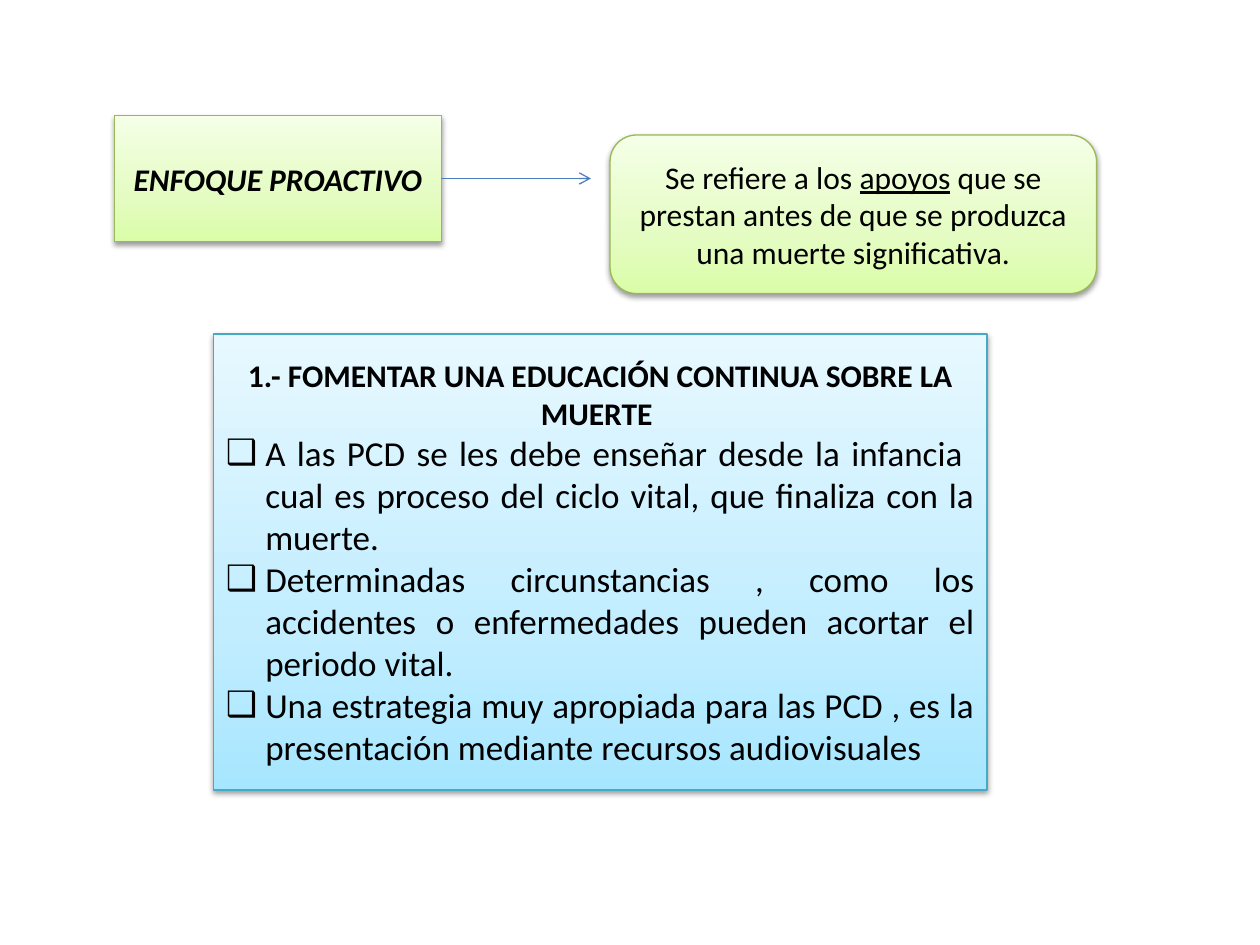
from lxml import etree
from pptx import Presentation
from pptx import util as u
from pptx.dml.color import RGBColor
from pptx.enum import shapes, text
from pptx.oxml import ns

COLORS = {
    "text": "000000",
    "arrow": "4B7EBC",
    "shadow": "000000",
    "green_line": "98B955",
    "blue_line": "46AAC5",
}
GRADIENTS = {
    "green": ((0, "DAFDA7"), (35, "E4FCC2"), (100, "F5FFE7")),
    "blue": ((0, "A7E6FF"), (35, "C1EDFF"), (100, "E7F8FF")),
}
FONT = "Calibri"
HEADING = "1.- FOMENTAR UNA EDUCACIÓN CONTINUA SOBRE LA MUERTE "
POINTS = [
    "A las PCD se les debe enseñar desde la infancia  cual es proceso del ciclo vital, "
    "que finaliza con la muerte.",
    "Determinadas circunstancias , como los accidentes o enfermedades pueden acortar "
    "el periodo vital.",
    "Una estrategia muy apropiada para las PCD , es la presentación mediante recursos "
    "audiovisuales",
]


def color(name):
    return RGBColor.from_string(COLORS[name])


def add_child(parent, tag, **attributes):
    child = etree.SubElement(parent, ns.qn(tag))
    for key, value in attributes.items():
        child.set(key, str(value))
    return child


def style_gradient(shape, theme):
    shape.fill.gradient()
    shape.fill.gradient_angle = 90
    stops = shape._element.spPr.find(".//" + ns.qn("a:gsLst"))
    for stop in list(stops):
        stops.remove(stop)
    for position, value in GRADIENTS[theme]:
        stop = add_child(stops, "a:gs", pos=position * 1000)
        add_child(stop, "a:srgbClr", val=value)


def style_shadow(shape):
    shape.shadow.inherit = False
    effects = shape._element.spPr.find(ns.qn("a:effectLst"))
    shadow = add_child(effects, "a:outerShdw", blurRad=u.Pt(3.1), dist=u.Pt(1.6),
                       dir=90 * 60000, rotWithShape=0)
    tint = add_child(shadow, "a:srgbClr", val=COLORS["shadow"])
    add_child(tint, "a:alpha", val=38000)


def add_panel(page, kind, box, theme):
    panel = page.shapes.add_shape(kind, *map(u.Pt, box))
    style_gradient(panel, theme)
    panel.line.color.rgb = color(theme + "_line")
    panel.line.width = u.Pt(0.75)
    style_shadow(panel)
    panel.text_frame.word_wrap = True
    panel.text_frame.vertical_anchor = text.MSO_ANCHOR.MIDDLE
    return panel


def add_span(para, wording, size=18, bold=None, italic=None, underline=None):
    span = para.add_run()
    span.text = wording
    font = span.font
    font.name, font.size = FONT, u.Pt(size)
    font.bold, font.italic, font.underline = bold, italic, underline
    font.color.rgb = color("text")


def set_bullet(para, indent=22.5):
    properties = para._p.get_or_add_pPr()
    properties.set("marL", str(u.Pt(indent)))
    properties.set("indent", str(-u.Pt(indent)))
    add_child(properties, "a:buFont", typeface="Arial")
    add_child(properties, "a:buChar", char="❑")


def add_approach(page, box):
    panel = add_panel(page, shapes.MSO_SHAPE.RECTANGLE, box, "green")
    para = panel.text_frame.paragraphs[0]
    para.alignment = text.PP_ALIGN.CENTER
    add_span(para, "ENFOQUE PROACTIVO", bold=True, italic=True)
    return panel


def add_arrow(page, source, length):
    left = source.left + source.width
    middle = source.top + source.height // 2
    arrow = page.shapes.add_connector(
        shapes.MSO_CONNECTOR.STRAIGHT, left, middle, left + u.Pt(length), middle)
    arrow.begin_connect(source, 3)
    arrow.line.color.rgb = color("arrow")
    arrow.line.width = u.Pt(0.75)
    add_child(arrow.line._get_or_add_ln(), "a:tailEnd", type="arrow")
    add_child(arrow._element.spPr, "a:effectLst")


def add_definition(page, box):
    panel = add_panel(page, shapes.MSO_SHAPE.ROUNDED_RECTANGLE, box, "green")
    para = panel.text_frame.paragraphs[0]
    para.alignment = text.PP_ALIGN.CENTER
    add_span(para, "Se refiere a los ")
    add_span(para, "apoyos", underline=True)
    add_span(para, " que se prestan antes de que se produzca una muerte significativa.")


def add_education(page, box):
    panel = add_panel(page, shapes.MSO_SHAPE.RECTANGLE, box, "blue")
    heading = panel.text_frame.paragraphs[0]
    heading.alignment = text.PP_ALIGN.CENTER
    add_span(heading, HEADING, bold=True)
    for point in POINTS:
        para = panel.text_frame.add_paragraph()
        para.alignment = text.PP_ALIGN.JUSTIFY
        set_bullet(para)
        add_span(para, point, size=20)


def main():
    deck = Presentation()
    deck.slide_width, deck.slide_height = u.Pt(720), u.Pt(540)
    page = deck.slides.add_slide(deck.slide_layouts[6])
    approach = add_approach(page, (65.3, 66, 187, 72))
    add_arrow(page, approach, 85.4)
    add_definition(page, (348.6, 77.2, 278, 90.6))
    add_education(page, (122, 190.8, 442, 260.6))
    deck.save("out.pptx")


if __name__ == "__main__":
    main()
